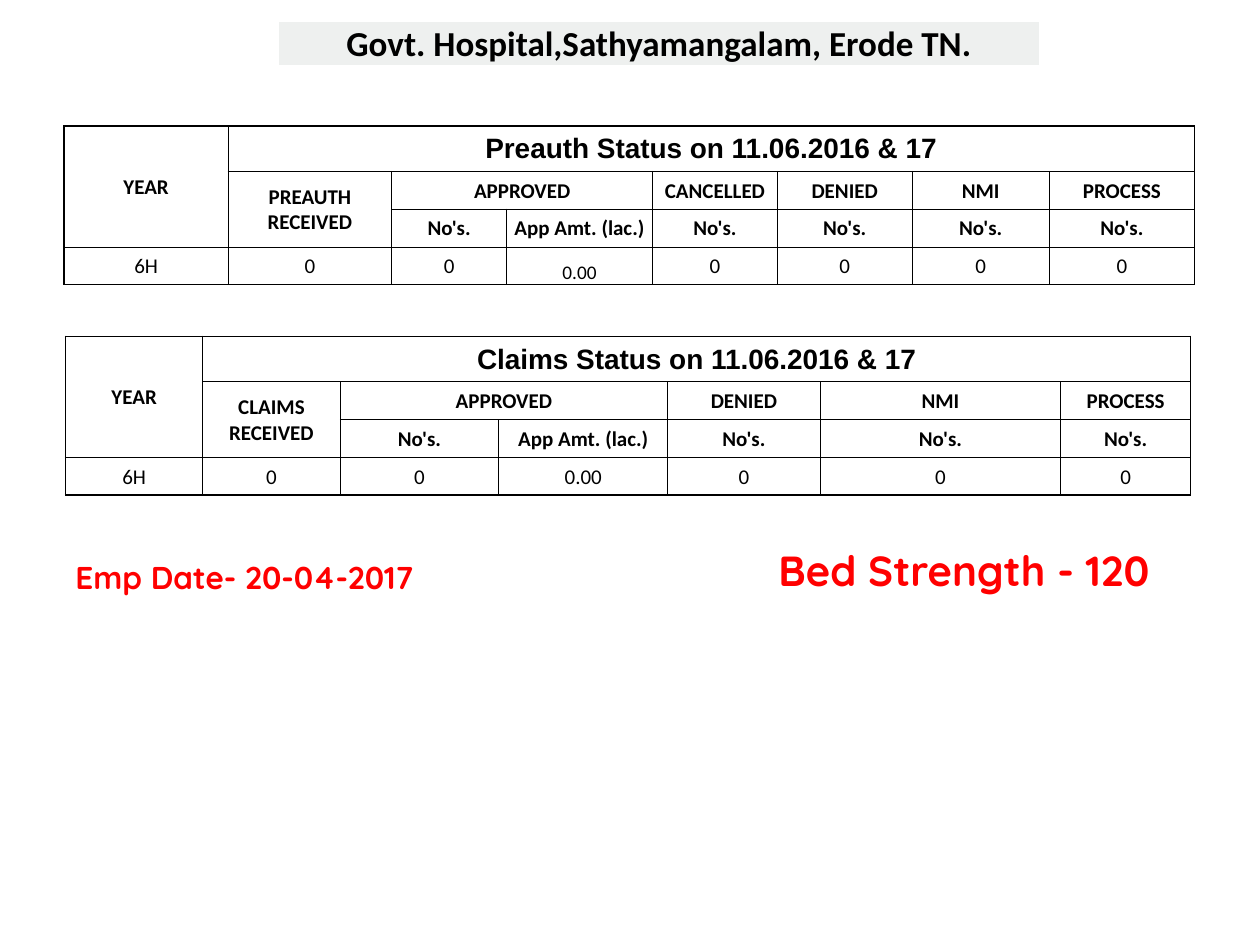
from lxml.etree import SubElement
from pptx import Presentation
from pptx.dml.color import RGBColor
from pptx.enum.text import MSO_ANCHOR, PP_ALIGN
from pptx.oxml.ns import qn
from pptx.util import Inches, Pt

BLACK = RGBColor(0x00, 0x00, 0x00)
WHITE = RGBColor(0xFF, 0xFF, 0xFF)
RED = RGBColor(0xFF, 0x00, 0x00)
TITLE_GREY = RGBColor(0xEE, 0xF0, 0xEF)

STATUS_ROW_HEIGHTS = [0.36, 0.3, 0.3, 0.3]
OUTER_LINE, INNER_LINE = 1, 0.5


def write_text(frame, text, font="Calibri", size=12, bold=True, color=BLACK,
               align=PP_ALIGN.CENTER):
    paragraph = frame.paragraphs[0]
    paragraph.alignment = align
    run = paragraph.add_run()
    run.text = text
    run.font.name = font
    run.font.size = Pt(size)
    run.font.bold = bold
    run.font.color.rgb = color


def set_borders(cell, widths, color):
    """Draw the cell's sides; widths are points for left, right, top, bottom."""
    properties = cell._tc.get_or_add_tcPr()
    for side, width in zip(("lnL", "lnR", "lnT", "lnB"), widths):
        line = SubElement(properties, qn(f"a:{side}"), w=str(Pt(width)))
        fill = SubElement(line, qn("a:solidFill"))
        SubElement(fill, qn("a:srgbClr"), val=str(color))


def style_cell(cell, fill, anchor=MSO_ANCHOR.MIDDLE):
    cell.fill.solid()
    cell.fill.fore_color.rgb = fill
    cell.margin_left = cell.margin_right = cell.margin_top = Inches(0.01)
    cell.margin_bottom = 0
    cell.vertical_anchor = anchor


def add_plain_table(slide, left, top, column_widths, row_heights):
    table = slide.shapes.add_table(
        len(row_heights), len(column_widths), Inches(left), Inches(top),
        Inches(sum(column_widths)), Inches(sum(row_heights))).table
    table.first_row = table.horz_banding = False
    for column, width in zip(table.columns, column_widths):
        column.width = Inches(width)
    for row, height in zip(table.rows, row_heights):
        row.height = Inches(height)
    return table


def add_title(slide, text):
    cell = add_plain_table(slide, 2.21, 0.17, [6.04], [0.34]).cell(0, 0)
    set_borders(cell, [OUTER_LINE] * 4, WHITE)
    style_cell(cell, TITLE_GREY, MSO_ANCHOR.BOTTOM)
    write_text(cell.text_frame, text, size=20)


def add_status_table(slide, left, top, column_widths, heading, received, outcomes):
    """Year, received and approved columns, then one column per outcome."""
    table = add_plain_table(slide, left, top, column_widths, STATUS_ROW_HEIGHTS)
    last_row, last_column = len(STATUS_ROW_HEIGHTS) - 1, len(column_widths) - 1

    # Merged headers
    for start, end in (((0, 0), (2, 0)), ((0, 1), (0, last_column)),
                       ((1, 1), (2, 1)), ((1, 2), (1, 3))):
        table.cell(*start).merge(table.cell(*end))

    # Grid with a heavier outer frame
    for r in range(last_row + 1):
        for c in range(last_column + 1):
            cell = table.cell(r, c)
            at_edge = (c == 0, c + cell.span_width > last_column,
                       r == 0, r + cell.span_height > last_row)
            set_borders(cell, [OUTER_LINE if edge else INNER_LINE
                               for edge in at_edge], BLACK)
            style_cell(cell, WHITE)

    # Headers and the data row
    write_text(table.cell(0, 0).text_frame, "YEAR")
    write_text(table.cell(0, 1).text_frame, heading, font="Arial", size=16)
    write_text(table.cell(1, 1).text_frame, received)
    write_text(table.cell(1, 2).text_frame, "APPROVED")
    for c, outcome in enumerate(outcomes, start=4):
        write_text(table.cell(1, c).text_frame, outcome)
    units = ["No's.", "App Amt. (lac.)"] + ["No's."] * len(outcomes)
    for c, unit in enumerate(units, start=2):
        write_text(table.cell(2, c).text_frame, unit)
    values = ["6H", "0", "0", "0.00"] + ["0"] * len(outcomes)
    for c, value in enumerate(values):
        write_text(table.cell(last_row, c).text_frame, value, bold=False)
    return table


def add_note(slide, left, top, width, height, text, size):
    note = slide.shapes.add_textbox(Inches(left), Inches(top),
                                    Inches(width), Inches(height))
    note.text_frame.word_wrap = True
    write_text(note.text_frame, text, font="Quicksand", size=size, color=RED,
               align=PP_ALIGN.LEFT)


def main():
    presentation = Presentation()
    presentation.slide_width = Inches(10)
    presentation.slide_height = Inches(7.5)
    slide = presentation.slides.add_slide(presentation.slide_layouts[6])

    add_title(slide, "Govt. Hospital,Sathyamangalam, Erode TN.")
    add_note(slide, 6.08, 4.27, 3.39, 0.5, "Bed Strength - 120", 24)

    preauth = add_status_table(
        slide, 0.51, 1, [1.3, 1.3, 0.91, 1.16, 0.99, 1.07, 1.09, 1.15],
        "Preauth Status on 11.06.2016 & 17", "PREAUTH RECEIVED",
        ["CANCELLED", "DENIED", "NMI", "PROCESS"])
    # The preauth amount is smaller and sits at the bottom of its cell
    amount = preauth.cell(3, 3)
    amount.vertical_anchor = MSO_ANCHOR.BOTTOM
    amount.text_frame.paragraphs[0].runs[0].font.size = Pt(11)

    add_status_table(
        slide, 0.52, 2.67, [1.09, 1.09, 1.26, 1.34, 1.21, 1.91, 1.03],
        "Claims Status on 11.06.2016 & 17", "CLAIMS RECEIVED",
        ["DENIED", "NMI", "PROCESS"])

    add_note(slide, 0.5, 4.38, 3.33, 0.4, "Emp Date- 20-04-2017", 18)
    presentation.save("out.pptx")


if __name__ == "__main__":
    main()
